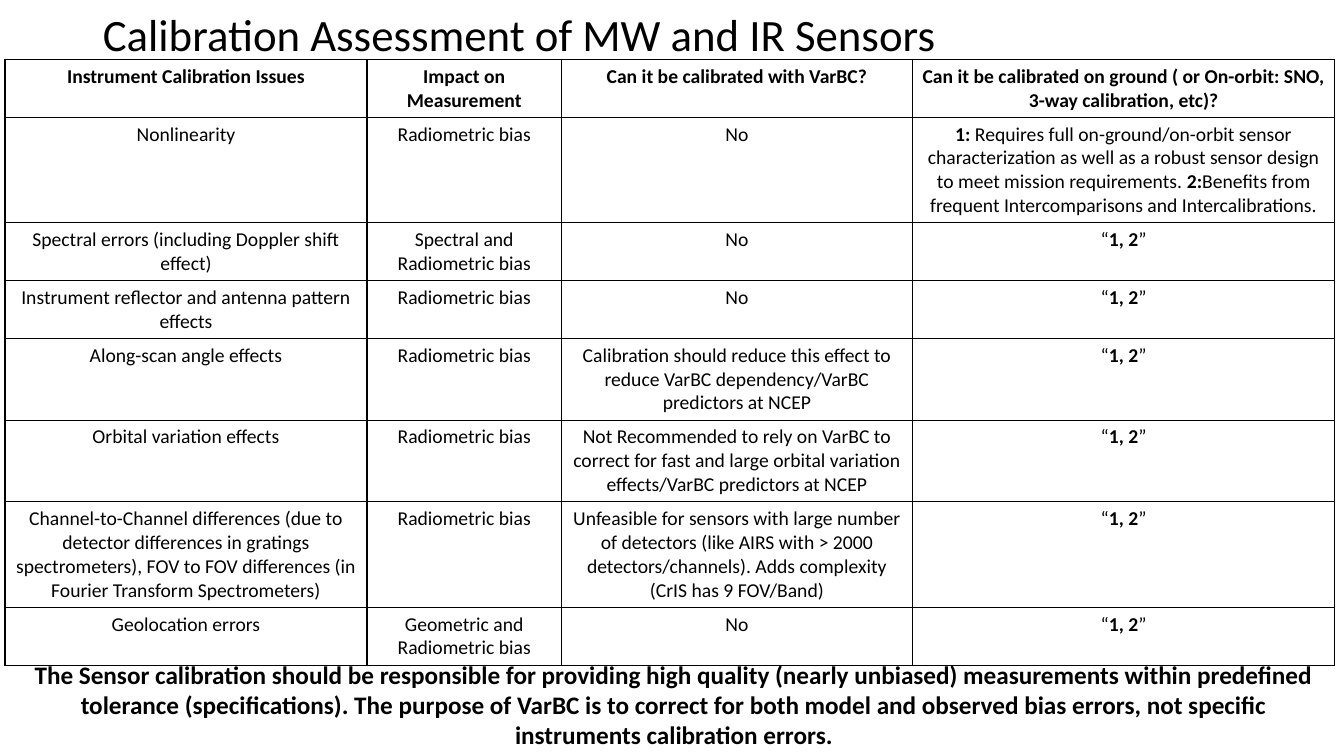
from lxml import etree
from pptx import Presentation
from pptx.dml.color import RGBColor
from pptx.enum.text import MSO_ANCHOR, MSO_AUTO_SIZE, PP_ALIGN
from pptx.oxml.ns import qn
from pptx.util import Inches, Pt

CENTER, LEFT = PP_ALIGN.CENTER, PP_ALIGN.LEFT
MIDDLE = MSO_ANCHOR.MIDDLE
NO_AUTOFIT = MSO_AUTO_SIZE.NONE
TITLE_ONLY_LAYOUT = 5
FONT = "Calibri"
COLORS = {"text": "000000", "border": "000000"}
BOLD_MARK = "**"

TITLE = "Calibration Assessment of MW and IR Sensors"
CONCLUSION = (
    "The Sensor calibration should be responsible for providing high quality "
    "(nearly unbiased) measurements within predefined tolerance (specifications). "
    "The purpose of VarBC is to correct for both model and observed bias errors, "
    "not specific instruments calibration errors."
)
RADIOMETRIC = "Radiometric bias"
SAME_ANSWER = "“**1, 2**”"
HEADERS = [
    "Instrument Calibration Issues",
    "Impact on Measurement",
    "Can it be calibrated with VarBC?",
    "Can it be calibrated on ground ( or On-orbit: SNO, 3-way calibration, etc)?",
]
ISSUES = [
    ["Nonlinearity", RADIOMETRIC, "No",
     "**1:** Requires full on-ground/on-orbit sensor characterization as well as a "
     "robust sensor design to meet mission requirements. **2:**Benefits from "
     "frequent Intercomparisons and Intercalibrations."],
    ["Spectral errors (including Doppler shift effect)",
     "Spectral and Radiometric bias", "No", SAME_ANSWER],
    ["Instrument reflector and antenna pattern effects",
     RADIOMETRIC, "No", SAME_ANSWER],
    ["Along-scan angle effects", RADIOMETRIC,
     "Calibration should reduce this effect to reduce VarBC dependency/VarBC "
     "predictors at NCEP", SAME_ANSWER],
    ["Orbital variation effects", RADIOMETRIC,
     "Not Recommended to rely on VarBC to correct for fast and large orbital "
     "variation effects/VarBC predictors at NCEP", SAME_ANSWER],
    ["Channel-to-Channel differences (due to detector differences in gratings "
     "spectrometers), FOV to FOV differences (in Fourier Transform Spectrometers)",
     RADIOMETRIC,
     "Unfeasible for sensors with large number of detectors (like AIRS with > 2000 "
     "detectors/channels). Adds complexity (CrIS has 9 FOV/Band)", SAME_ANSWER],
    ["Geolocation errors", "Geometric and Radiometric bias", "No", SAME_ANSWER],
]
COLUMN_WIDTHS = [3.59, 1.93, 3.48, 4.19]
ROW_LINES = [2, 4, 2, 2, 3, 3, 4, 2]
LINE_HEIGHT, CELL_PADDING = 0.235, 0.1


def write_text(text_frame, text, size, alignment, bold=False):
    """Write one paragraph, setting the parts between bold marks in bold."""
    paragraph = text_frame.paragraphs[0]
    paragraph.alignment = alignment
    for index, part in enumerate(text.split(BOLD_MARK)):
        if part:
            run = paragraph.add_run()
            run.text = part
            run.font.name = FONT
            run.font.size = Pt(size)
            run.font.bold = bold or index % 2 == 1
            run.font.color.rgb = RGBColor.from_string(COLORS["text"])


def add_borders(cell):
    """Draw a one-point line on all four sides of a cell."""
    properties = cell._tc.get_or_add_tcPr()
    for index, side in enumerate(("a:lnL", "a:lnR", "a:lnT", "a:lnB")):
        line = etree.Element(qn(side), w=str(Pt(1)))
        fill = etree.SubElement(line, qn("a:solidFill"))
        etree.SubElement(fill, qn("a:srgbClr"), val=COLORS["border"])
        properties.insert(index, line)


def set_title(slide):
    """Place and format the slide title."""
    title = slide.shapes.title
    title.left, title.top = Inches(0.92), Inches(0)
    title.width, title.height = Inches(11.5), Inches(0.74)
    title.text_frame.auto_size = NO_AUTOFIT
    title.text_frame.vertical_anchor = MIDDLE
    write_text(title.text_frame, TITLE, 32, LEFT)
    title.text_frame.paragraphs[0].line_spacing = 0.9


def add_issue_table(slide):
    """Add the bordered table of calibration issues."""
    rows = [HEADERS] + ISSUES
    row_heights = [CELL_PADDING + LINE_HEIGHT * lines for lines in ROW_LINES]
    table = slide.shapes.add_table(
        len(rows), len(HEADERS), Inches(0.05), Inches(0.59),
        Inches(sum(COLUMN_WIDTHS)), Inches(sum(row_heights)),
    ).table
    table.first_row = table.horz_banding = False
    for column, width in zip(table.columns, COLUMN_WIDTHS):
        column.width = Inches(width)
    for row_index, (row, texts) in enumerate(zip(table.rows, rows)):
        row.height = Inches(row_heights[row_index])
        for cell, text in zip(row.cells, texts):
            cell.fill.background()
            add_borders(cell)
            write_text(cell.text_frame, text, 14, CENTER, bold=row_index == 0)


def add_conclusion(slide):
    """Add the closing statement below the table."""
    box = slide.shapes.add_textbox(
        Inches(0.1), Inches(6.49), Inches(13.17), Inches(1.01))
    box.text_frame.word_wrap = True
    write_text(box.text_frame, CONCLUSION, 18, CENTER, bold=True)


def main():
    """Build and save the calibration slide."""
    presentation = Presentation()
    presentation.slide_width = Inches(13.33)
    presentation.slide_height = Inches(7.5)
    layout = presentation.slide_layouts[TITLE_ONLY_LAYOUT]
    slide = presentation.slides.add_slide(layout)
    set_title(slide)
    add_issue_table(slide)
    add_conclusion(slide)
    presentation.save("out.pptx")


if __name__ == "__main__":
    main()
